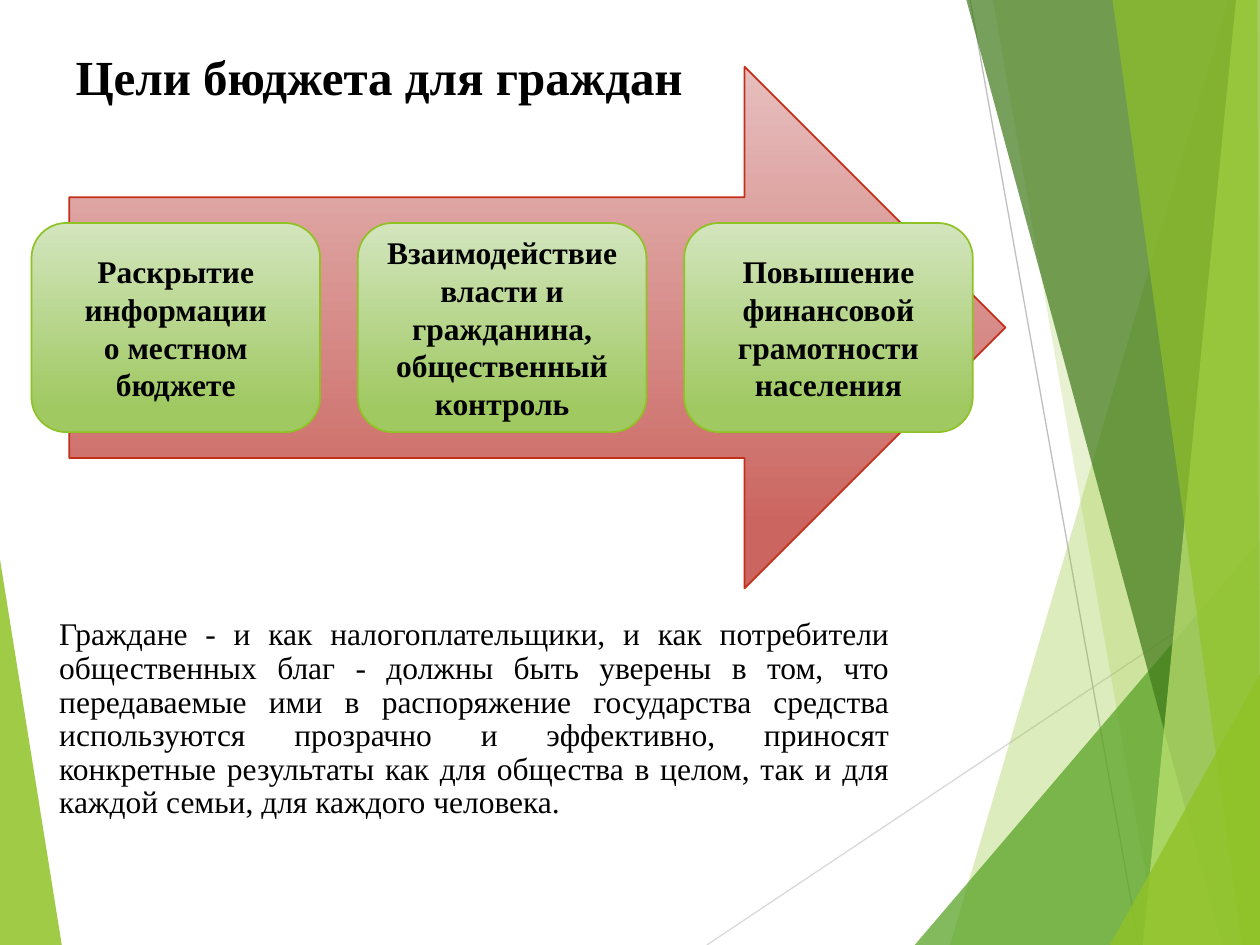
from dataclasses import dataclass

from lxml.etree import SubElement
from pptx import Presentation
from pptx.dml.color import RGBColor
from pptx.enum.shapes import MSO_CONNECTOR, MSO_SHAPE
from pptx.enum.text import MSO_ANCHOR, MSO_AUTO_SIZE, PP_ALIGN
from pptx.oxml.ns import qn
from pptx.util import Inches, Pt


@dataclass(frozen=True)
class Theme:
    font: str = "Times New Roman"
    title_size: int = 28
    body_size: int = 18
    body_spacing: float = 19.2
    text: str = "000000"
    lime: str = "90C226"
    green: str = "54A021"
    dark_green: str = "3F7819"
    pale_lime: str = "C0E474"
    red: str = "C42F1A"
    light_gray: str = "D9D9D9"
    gray: str = "BFBFBF"
    arrow_gradient: tuple = ("E6BFBE", "CB6560")
    card_gradient: tuple = ("D3E5BE", "A0C962")


class SlideBuilder:
    def __init__(self, slide, theme):
        self.s = slide
        self.theme = theme

    def facet(self, points, color, opacity):
        """Translucent polygon without an outline."""
        pts = [(Inches(x), Inches(y)) for x, y in points]
        builder = self.s.shapes.build_freeform(*pts[0])
        builder.add_line_segments(pts[1:], close=True)
        sp = builder.convert_to_shape()
        sp.shadow.inherit = False
        sp.line.fill.background()
        sp.fill.solid()
        sp.fill.fore_color.rgb = RGBColor.from_string(color)
        clr = sp.fill._xPr.find(".//" + qn("a:srgbClr"))
        SubElement(clr, qn("a:alpha"), val=str(opacity * 1000))

    def line(self, start, end, color):
        ends = [Inches(v) for v in (*start, *end)]
        cx = self.s.shapes.add_connector(MSO_CONNECTOR.STRAIGHT, *ends)
        cx.line.color.rgb = RGBColor.from_string(color)
        cx.line.width = Pt(0.75)
        SubElement(cx._element.spPr, qn("a:effectLst"))

    def gradient_shape(self, kind, box, gradient, outline):
        """Preset shape shaded from top to bottom."""
        sp = self.s.shapes.add_shape(kind, *[Inches(v) for v in box])
        sp.shadow.inherit = False
        sp.fill.gradient()
        sp.fill.gradient_angle = 270
        for stop, color, position in zip(sp.fill.gradient_stops, gradient, (0, 0.88)):
            stop.color.rgb = RGBColor.from_string(color)
            stop.position = position
        sp.line.color.rgb = RGBColor.from_string(outline)
        sp.line.width = Pt(1)
        return sp

    def card(self, box, text):
        sp = self.gradient_shape(MSO_SHAPE.FLOWCHART_ALTERNATE_PROCESS, box,
                                 self.theme.card_gradient, self.theme.lime)
        tf = sp.text_frame
        tf.word_wrap = True
        tf.vertical_anchor = MSO_ANCHOR.MIDDLE
        tf.text = text
        self.format_text(tf, self.theme.body_size, True, PP_ALIGN.CENTER)

    def placeholder(self, sp, box, text, size, bold=False, top_inset=0):
        """Move a template placeholder and fill it with justified text."""
        sp.left, sp.top, sp.width, sp.height = [Inches(v) for v in box]
        tf = sp.text_frame
        tf.text = text
        tf.word_wrap = True
        tf.auto_size = MSO_AUTO_SIZE.NONE
        tf.vertical_anchor = MSO_ANCHOR.TOP
        tf.margin_left = tf.margin_right = tf.margin_bottom = 0
        tf.margin_top = Inches(top_inset)
        self.format_text(tf, size, bold, PP_ALIGN.JUSTIFY)
        return tf

    def title(self, box, text):
        self.placeholder(self.s.shapes.title, box, text,
                         self.theme.title_size, bold=True, top_inset=0.05)

    def body(self, box, text):
        tf = self.placeholder(self.s.placeholders[1], box, text, self.theme.body_size)
        for p in tf.paragraphs:
            p.line_spacing = Pt(self.theme.body_spacing)
            p.space_before = Pt(0)
            pPr = p._p.get_or_add_pPr()
            pPr.set("marL", "0")
            pPr.set("indent", "0")
            SubElement(pPr, qn("a:buNone"))

    def format_text(self, tf, size, bold, align):
        for p in tf.paragraphs:
            p.alignment = align
            for r in p.runs:
                r.font.name = self.theme.font
                r.font.size = Pt(size)
                r.font.bold = bold
                r.font.color.rgb = RGBColor.from_string(self.theme.text)


def main():
    prs = Presentation()
    prs.slide_width, prs.slide_height = Inches(10), Inches(7.5)
    theme = Theme()
    slide = SlideBuilder(prs.slides.add_slide(prs.slide_layouts[1]), theme)

    # Background facets and thin lines
    slide.facet([(0, 4.44), (0.49, 7.5), (0, 7.5)], theme.lime, 85)
    slide.line((5.61, 7.5), (10, 4.57), theme.light_gray)
    slide.line((7.7, 0), (9.04, 7.5), theme.gray)
    right_facets = [
        ([(9.75, 0), (7.54, 7.5), (10, 7.5), (10, 0)], theme.lime, 30),
        ([(7.88, 0), (9.19, 7.5), (10, 7.5), (10, 0)], theme.lime, 20),
        ([(7.26, 7.5), (10, 4.29), (10, 7.5)], theme.green, 72),
        ([(7.67, 0), (9.7, 7.5), (10, 7.5), (10, 0)], theme.dark_green, 70),
        ([(9.81, 0), (9.07, 7.5), (10, 7.5), (10, 0)], theme.pale_lime, 70),
        ([(8.83, 0), (9.86, 7.5), (10, 7.5), (9.98, 0)], theme.lime, 65),
        ([(8.81, 7.5), (10, 5.35), (10, 7.5)], theme.lime, 80),
    ]
    for points, color, opacity in right_facets:
        slide.facet(points, color, opacity)

    # Arrow behind the goals
    slide.gradient_shape(MSO_SHAPE.RIGHT_ARROW, (0.55, 0.53, 7.43, 4.14),
                         theme.arrow_gradient, theme.red)

    # Title and explanation
    slide.title((0.6, 0.32, 5.51, 0.43), "Цели бюджета для граждан")
    slide.body(
        (0.47, 4.91, 6.59, 2.25),
        "Граждане - и как налогоплательщики, и как потребители общественных благ - "
        "должны быть уверены в том, что передаваемые ими в распоряжение государства "
        "средства используются прозрачно и эффективно, приносят конкретные результаты "
        "как для общества в целом, так и для каждой семьи, для каждого человека.")

    # Three goals at equal steps
    goals = [
        "Раскрытие информации\nо местном бюджете",
        "Взаимодействие власти и гражданина, общественный контроль",
        "Повышение финансовой грамотности населения",
    ]
    left, width, gap = 0.25, 2.29, 0.3
    for i, goal in enumerate(goals):
        slide.card((left + i * (width + gap), 1.77, width, 1.66), goal)

    prs.save("out.pptx")


if __name__ == "__main__":
    main()
